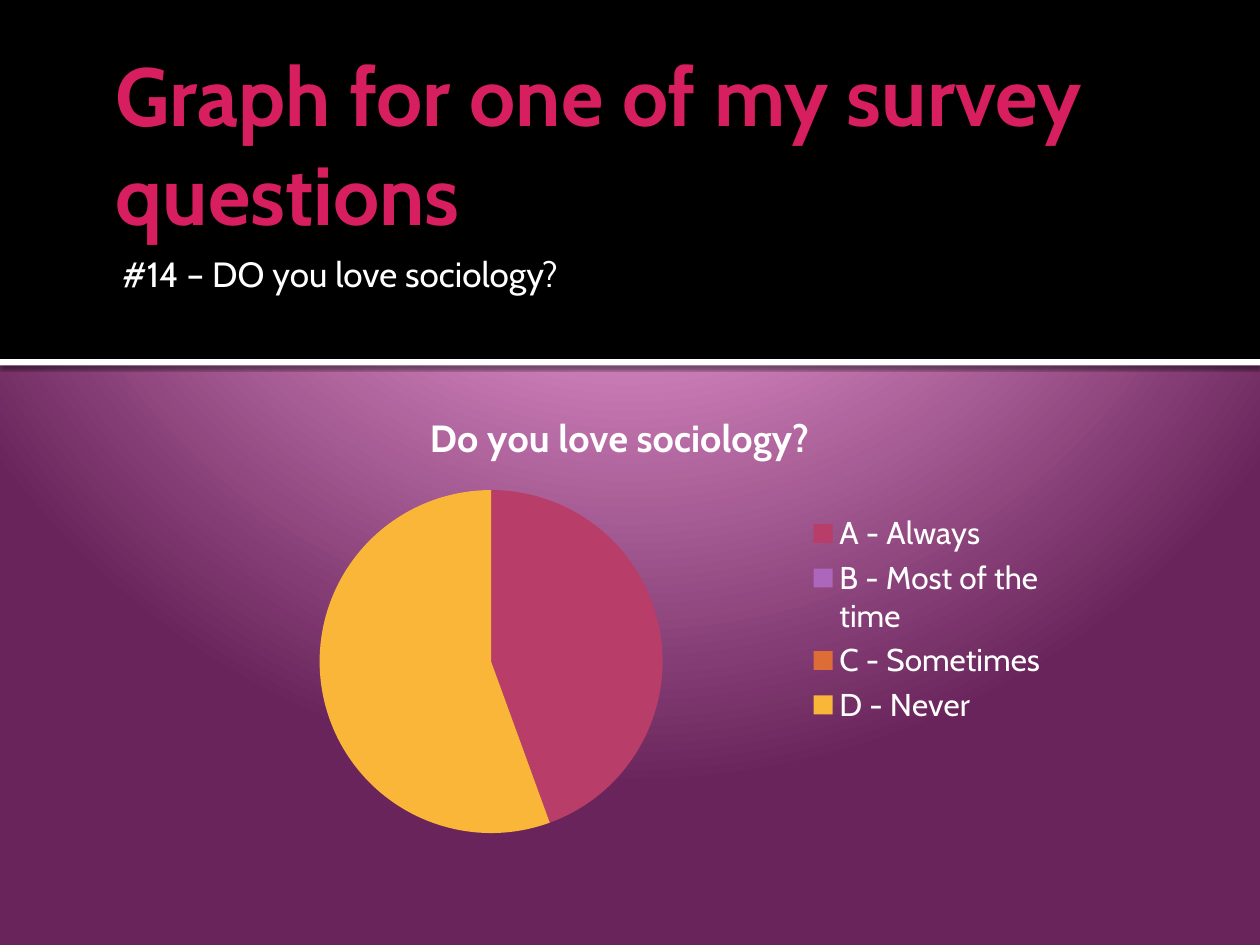
"""Build a survey slide with a banner heading and a pie chart of the answers."""
from dataclasses import dataclass

from lxml import etree
from pptx import Presentation
from pptx.chart.data import CategoryChartData
from pptx.dml.color import RGBColor
from pptx.enum.chart import XL_CHART_TYPE, XL_LEGEND_POSITION
from pptx.enum.shapes import MSO_SHAPE
from pptx.enum.text import MSO_ANCHOR
from pptx.oxml import parse_xml
from pptx.oxml.ns import nsdecls, qn
from pptx.util import Inches, Pt

RECTANGLE = MSO_SHAPE.RECTANGLE
PIE = XL_CHART_TYPE.PIE
LEGEND_RIGHT = XL_LEGEND_POSITION.RIGHT
TOP, BOTTOM = MSO_ANCHOR.TOP, MSO_ANCHOR.BOTTOM
FONT = "Cabin"
WHITE = "FFFFFF"
QUESTION = "Do you love sociology?"
GLOW_STOPS = ((0, "F9A8E2"), (12, "F9A8E2"), (20, "F9A6E1"), (100, "69255B"))


@dataclass(frozen=True)
class Box:
    left: float
    top: float
    width: float
    height: float

    def lengths(self) -> tuple:
        return tuple(Inches(n) for n in (self.left, self.top, self.width, self.height))


@dataclass(frozen=True)
class Heading:
    box: Box
    words: str
    size: float
    color: str
    bold: bool
    anchor: MSO_ANCHOR
    left_inset: float
    right_inset: float


@dataclass(frozen=True)
class Answer:
    label: str
    share: int
    color: str


BANNER = Box(0, 0, 10, 2.85)
DIVIDER = Box(0, 2.85, 10, 0.05)
CHART = Box(1.42, 3.08, 7, 3.67)
HEADINGS = (
    Heading(Box(0.82, 0.13, 8.76, 1.79), "Graph for one of my survey questions",
            47, "D71E5F", True, BOTTOM, 0.1, 0.1),
    Heading(Box(0.81, 2, 8.77, 0.75), "#14 – DO you love sociology?",
            20, WHITE, False, TOP, 0.16, 0.05),
)
ANSWERS = (
    Answer("A - Always", 44, "B83D68"),
    Answer("B - Most of the time", 0, "AC66BB"),
    Answer("C - Sometimes", 0, "DE6C36"),
    Answer("D - Never", 55, "F9B639"),
)


def paint(target, color: str) -> None:
    """Give a fill a solid colour."""
    target.solid()
    target.fore_color.rgb = RGBColor.from_string(color)


def style_font(font, size: float, color: str, bold: bool = False) -> None:
    """Set the typeface, size, colour and weight of a font."""
    font.name, font.size, font.bold = FONT, Pt(size), bold
    paint(font.fill, color)


def add_glow(slide) -> None:
    """Fill the background with a circular gradient centred above the slide."""
    slide.background.fill.gradient()
    stops = "".join(
        f'<a:gs pos="{place * 1000}"><a:srgbClr val="{color}"/></a:gs>'
        for place, color in GLOW_STOPS
    )
    glow = parse_xml(
        f'<a:gradFill {nsdecls("a")} rotWithShape="1"><a:gsLst>{stops}</a:gsLst>'
        '<a:path path="circle"><a:fillToRect l="10000" t="-25000" r="10000" b="125000"/>'
        '</a:path></a:gradFill>'
    )
    plain = next(slide.element.iter(qn("a:gradFill")))
    plain.getparent().replace(plain, glow)


def add_band(slide, box: Box, color: str):
    """Add a flat borderless rectangle."""
    band = slide.shapes.add_shape(RECTANGLE, *box.lengths())
    band.shadow.inherit = False
    paint(band.fill, color)
    band.line.fill.background()
    return band


def add_drop_shadow(band) -> None:
    """Cast a narrow black shadow below a band."""
    effects = band.element.spPr.find(qn("a:effectLst"))
    shadow = etree.SubElement(effects, qn("a:outerShdw"), blurRad=str(Pt(2.5)),
                              dist=str(Pt(0.8)), dir="5400000", rotWithShape="0")
    black = etree.SubElement(shadow, qn("a:srgbClr"), val="000000")
    etree.SubElement(black, qn("a:alpha"), val="60000")


def add_heading(slide, heading: Heading) -> None:
    """Add one block of banner text."""
    frame = slide.shapes.add_textbox(*heading.box.lengths()).text_frame
    frame.word_wrap = True
    frame.vertical_anchor = heading.anchor
    frame.margin_left = Inches(heading.left_inset)
    frame.margin_right = Inches(heading.right_inset)
    frame.margin_top = frame.margin_bottom = Inches(0)
    run = frame.paragraphs[0].add_run()
    run.text = heading.words
    style_font(run.font, heading.size, heading.color, heading.bold)


def add_answer_pie(slide) -> None:
    """Add the pie chart of answers with its title and legend."""
    survey = CategoryChartData()
    survey.categories = [answer.label for answer in ANSWERS]
    survey.add_series(QUESTION, [answer.share for answer in ANSWERS])
    chart = slide.shapes.add_chart(PIE, *CHART.lengths(), survey).chart
    style_font(chart.font, 18, WHITE)
    chart.has_title = True
    title_run = chart.chart_title.text_frame.paragraphs[0].add_run()
    title_run.text = QUESTION
    style_font(title_run.font, 21.6, WHITE, True)
    chart.chart_title.include_in_layout = False
    chart.has_legend = True
    chart.legend.position = LEGEND_RIGHT
    chart.legend.include_in_layout = False
    style_font(chart.legend.font, 18, WHITE)
    pie = chart.plots[0]
    pie.vary_by_categories = True
    for index, answer in enumerate(ANSWERS):
        slice_format = pie.series[0].points[index].format
        paint(slice_format.fill, answer.color)
        slice_format.line.fill.background()


def main() -> None:
    """Assemble and save the slide."""
    deck = Presentation()
    deck.slide_width, deck.slide_height = Inches(10), Inches(7.5)
    slide = deck.slides.add_slide(deck.slide_layouts[6])
    add_glow(slide)
    add_band(slide, BANNER, "000000")
    add_drop_shadow(add_band(slide, DIVIDER, WHITE))
    for heading in HEADINGS:
        add_heading(slide, heading)
    add_answer_pie(slide)
    deck.save("out.pptx")


if __name__ == "__main__":
    main()
